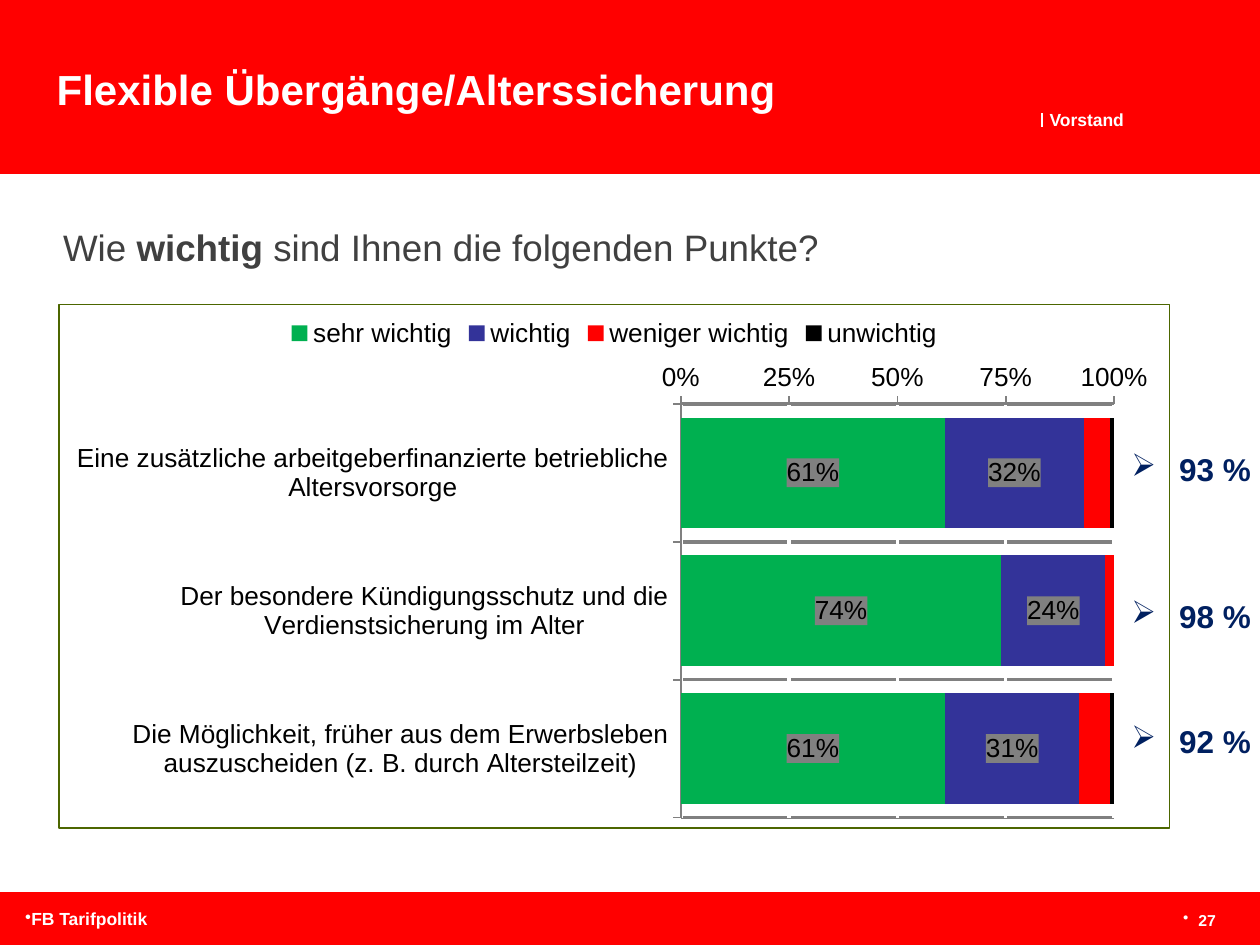
from lxml import etree
from pptx import Presentation
from pptx.chart.data import CategoryChartData
from pptx.dml.color import RGBColor
from pptx.enum.chart import XL_CHART_TYPE, XL_LEGEND_POSITION, XL_TICK_LABEL_POSITION, XL_TICK_MARK
from pptx.enum.shapes import MSO_CONNECTOR, MSO_SHAPE
from pptx.enum.text import MSO_ANCHOR, PP_ALIGN
from pptx.oxml import parse_xml
from pptx.oxml.ns import nsdecls, qn
from pptx.util import Inches, Pt


class Theme:
    font = "Arial"
    red, white, black = (RGBColor.from_string(c) for c in ("FF0000", "FFFFFF", "000000"))
    navy, grey, frame, axis = (RGBColor.from_string(c) for c in ("002060", "404040", "4C6600", "808080"))
    series = [RGBColor.from_string(c) for c in ("00B050", "333399", "FF0000", "000000")]
    title, question, total, chart, footer, number = (Pt(n) for n in (24, 21, 18, 15, 10, 9))


def write(shape, runs, size, color, inset=0, wrap=False, bullet=None, indent=0, hang=0,
          spacing=None, align=PP_ALIGN.LEFT, anchor=MSO_ANCHOR.TOP):
    """Fill a shape with one paragraph of (text, bold) runs."""
    tf = shape.text_frame
    tf.word_wrap = wrap
    tf.vertical_anchor = anchor
    tf.margin_left, tf.margin_right = Inches(inset), 0
    tf.margin_top = tf.margin_bottom = Inches(inset / 2)
    p = tf.paragraphs[0]
    p.alignment = align
    if spacing:
        p.line_spacing = spacing
    if bullet:
        pPr = p._p.get_or_add_pPr()
        pPr.set("marL", str(Inches(indent)))
        pPr.set("indent", str(-Inches(hang)))
        etree.SubElement(pPr, qn("a:buChar")).set("char", bullet)
    for text, bold in runs:
        r = p.add_run()
        r.text = text
        r.font.name, r.font.size, r.font.bold = Theme.font, size, bold
        r.font.color.rgb = color


def text_box(left, top, width, height, *args, **kwargs):
    box = s.shapes.add_textbox(Inches(left), Inches(top), Inches(width), Inches(height))
    write(box, *args, **kwargs)


prs = Presentation()
prs.slide_width, prs.slide_height = Inches(10), Inches(7.5)
s = prs.slides.add_slide(prs.slide_layouts[5])

# Red bands, moved behind the title
for i, (top, height) in enumerate([(7.08, 0.42), (0, 1.38)]):
    band = s.shapes.add_shape(MSO_SHAPE.RECTANGLE, 0, Inches(top), prs.slide_width, Inches(height))
    band.shadow.inherit = False
    band.fill.solid()
    band.fill.fore_color.rgb = Theme.red
    band.line.fill.background()
    s.shapes._spTree.insert(2 + i, band._element)

# Title and department mark
title = s.shapes.title
title.left, title.top, title.width, title.height = (Inches(n) for n in (0.35, 0.45, 5.96, 0.5))
write(title, [("Flexible Übergänge/Alterssicherung", True)], Theme.title, Theme.white,
      inset=0.1, anchor=MSO_ANCHOR.MIDDLE)
text_box(8.33, 0.88, 0.61, 0.15, [("Vorstand", True)], Theme.footer, Theme.white, spacing=Pt(11))
rule = s.shapes.add_connector(MSO_CONNECTOR.STRAIGHT, Inches(8.27), Inches(0.9), Inches(8.27), Inches(1.01))
rule.line.color.rgb = Theme.white
rule.line.width = Pt(0.8)
etree.SubElement(rule._element.spPr, qn("a:effectLst"))

# Footer
text_box(0.2, 7.21, 1.5, 0.17, [("FB Tarifpolitik", True)], Theme.footer, Theme.white,
         wrap=True, bullet="•", spacing=Pt(12))
text_box(9.39, 7.21, 0.26, 0.17, [("27", True)], Theme.number, Theme.white,
         bullet="•", indent=0.12, hang=0.12, spacing=Pt(12), align=PP_ALIGN.RIGHT)

# Question
text_box(0.5, 1.78, 8.42, 0.35,
         [("Wie ", False), ("wichtig", True), (" sind Ihnen die folgenden Punkte?", False)],
         Theme.question, Theme.grey, wrap=True)

# Chart data
data = CategoryChartData(number_format="0%")
data.categories = [
    "Eine zusätzliche arbeitgeberfinanzierte betriebliche Altersvorsorge",
    "Der besondere Kündigungsschutz und die Verdienstsicherung im Alter",
    "Die Möglichkeit, früher aus dem Erwerbsleben auszuscheiden (z. B. durch Altersteilzeit)",
]
data.add_series("sehr wichtig", (0.61, 0.74, 0.61))
data.add_series("wichtig", (0.32, 0.24, 0.31))
data.add_series("weniger wichtig", (0.06, 0.02, 0.07))
data.add_series("unwichtig", (0.01, 0, 0.01))
chart = s.shapes.add_chart(XL_CHART_TYPE.BAR_STACKED_100, Inches(0.46), Inches(2.41),
                           Inches(8.83), Inches(4.17), data).chart
chart.has_title = False
chart.font.name, chart.font.size = Theme.font, Theme.chart
chart.font.color.rgb = Theme.black
chart.has_legend = True
chart.legend.position = XL_LEGEND_POSITION.TOP
chart.legend.include_in_layout = False

# Chart frame and plot position
chart._chartSpace.chart.addnext(parse_xml(
    f'<c:spPr {nsdecls("c", "a")}><a:solidFill><a:srgbClr val="{Theme.white}"/></a:solidFill>'
    f'<a:ln w="{Pt(1)}"><a:solidFill><a:srgbClr val="{Theme.frame}"/></a:solidFill></a:ln></c:spPr>'))
plot_area = chart._chartSpace.chart.plotArea
for old in plot_area.findall(qn("c:layout")):
    plot_area.remove(old)
layout = etree.Element(qn("c:layout"))
manual = etree.SubElement(layout, qn("c:manualLayout"))
for tag, value in [("layoutTarget", "inner"), ("xMode", "edge"), ("yMode", "edge"),
                   ("x", "0.56"), ("y", "0.19"), ("w", "0.39"), ("h", "0.79")]:
    etree.SubElement(manual, qn(f"c:{tag}")).set("val", value)
plot_area.insert(0, layout)

# Axes
cat, val = chart.category_axis, chart.value_axis
cat.reverse_order = True
cat.tick_label_position = XL_TICK_LABEL_POSITION.LOW
val.minimum_scale, val.maximum_scale, val.major_unit = 0, 1, 0.25
val.tick_labels.number_format = "0%"
val.tick_labels.number_format_is_linked = False
for axis, grid_color in ((cat, Theme.axis), (val, Theme.white)):
    axis.major_tick_mark = XL_TICK_MARK.OUTSIDE
    axis.format.line.color.rgb = Theme.axis
    axis.format.line.width = Pt(1)
    axis.has_major_gridlines = True
    axis.major_gridlines.format.line.color.rgb = grid_color
    axis.major_gridlines.format.line.width = Pt(2)

# Bars, with labels on the two favourable answers
plot = chart.plots[0]
plot.gap_width, plot.overlap = 25, 100
plot.vary_by_categories = False
for i, (series, color) in enumerate(zip(plot.series, Theme.series)):
    series.format.fill.solid()
    series.format.fill.fore_color.rgb = color
    if i < 2:
        labels = series.data_labels
        labels.show_value = True
        labels.number_format = "0%"
        labels.number_format_is_linked = False
        labels._element.find(qn("c:numFmt")).addnext(parse_xml(
            f'<c:spPr {nsdecls("c", "a")}><a:solidFill><a:srgbClr val="{Theme.axis}"/></a:solidFill></c:spPr>'))

# Combined share beside each bar
for top, share in [(3.52, "93 %"), (4.69, "98 %"), (5.68, "92 %")]:
    text_box(8.88, top, 1.12, 0.4, [(share, True)], Theme.total, Theme.navy,
             inset=0.1, wrap=True, bullet="➢", indent=0.38, hang=0.38)

prs.save("out.pptx")
